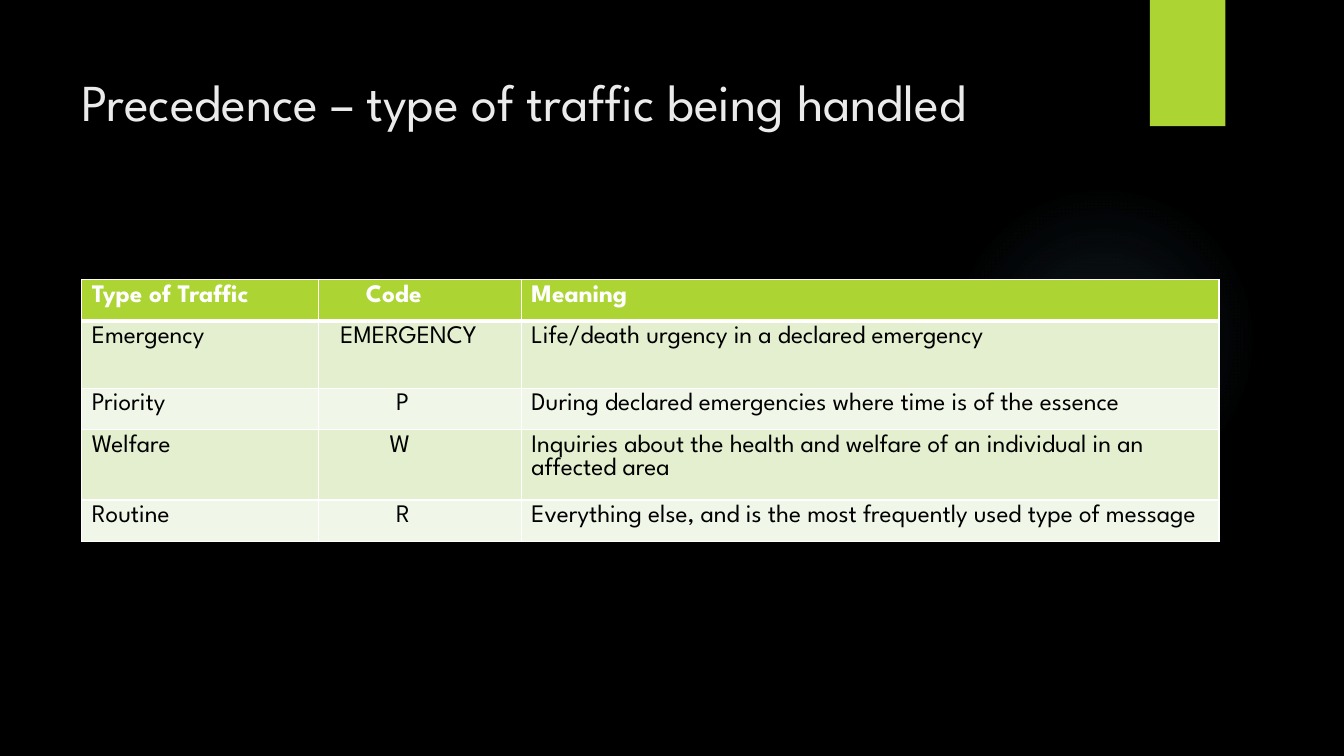
from pptx import Presentation
from pptx.dml.color import RGBColor
from pptx.enum.shapes import MSO_SHAPE as Shape
from pptx.enum.text import MSO_ANCHOR as Anchor
from pptx.oxml import parse_xml
from pptx.oxml.ns import nsdecls
from pptx.util import Cm, Pt

BLACK = RGBColor(0x00, 0x00, 0x00)
WHITE = RGBColor(0xFF, 0xFF, 0xFF)
TITLE_GREY = RGBColor(0xEB, 0xEB, 0xEB)
LIME = RGBColor(0xAC, 0xD4, 0x33)
BAND_DARK = RGBColor(0xE3, 0xEF, 0xCE)
BAND_LIGHT = RGBColor(0xF1, 0xF7, 0xE8)
GLOW_BLUE = RGBColor(0x7A, 0xC4, 0xF0)
FONT = "League Spartan"

COLUMN_WIDTHS = (5.96, 5.12, 17.58)
ROW_HEIGHTS = (1.04, 1.7, 1.04, 1.42, 1.04)
CODE_INDENTS = (1.2, 0.56, 1.96, 1.8, 1.96)
TRAFFIC_ROWS = (
    ("Type of Traffic", "Code", "Meaning"),
    ("Emergency", "EMERGENCY", "Life/death urgency in a declared emergency"),
    ("Priority", "P", "During declared emergencies where time is of the essence"),
    ("Welfare", "W", "Inquiries about the health and welfare of an individual in an affected area"),
    ("Routine", "R", "Everything else, and is the most frequently used type of message"),
)


def apply_format(target, values):
    """Set each named attribute of the target."""
    for name, value in values.items():
        setattr(target, name, value)


def write_text(text_frame, text, size, color, bold=False):
    """Write one formatted paragraph into a text frame."""
    paragraph = text_frame.paragraphs[0]
    run = paragraph.add_run()
    run.text = text
    apply_format(run.font, {"name": FONT, "size": Pt(size), "bold": bold})
    run.font.color.rgb = color


def add_plain_shape(slide, kind, left, top, width, height, color):
    """Add a filled shape without line or inherited shadow."""
    shape = slide.shapes.add_shape(kind, Cm(left), Cm(top), Cm(width), Cm(height))
    shape.shadow.inherit = False
    shape.fill.solid()
    shape.fill.fore_color.rgb = color
    shape.line.fill.background()
    return shape


def add_glow(slide):
    """Add the faint round glow behind the table."""
    shape = add_plain_shape(slide, Shape.OVAL, 23.9, 4.65, 7.82, 7.82, GLOW_BLUE)
    stops = "".join(
        f'<a:gs pos="{position * 1000}"><a:srgbClr val="{GLOW_BLUE}">'
        f'<a:alpha val="{alpha * 1000}"/></a:srgbClr></a:gs>'
        for position, alpha in ((0, 7), (36, 6), (69, 0))
    )
    gradient = parse_xml(
        f'<a:gradFill {nsdecls("a")}><a:gsLst>{stops}</a:gsLst><a:path path="circle">'
        '<a:fillToRect l="50000" t="50000" r="50000" b="50000"/></a:path></a:gradFill>'
    )
    properties = shape.element.spPr
    properties.replace(properties.find("{*}solidFill"), gradient)


def add_ribbon(slide):
    """Add the lime ribbon with its soft shadow."""
    shape = add_plain_shape(slide, Shape.RECTANGLE, 28.98, 0, 1.9, 3.18, LIME)
    shadow = parse_xml(
        f'<a:outerShdw {nsdecls("a")} blurRad="{Pt(3)}" dist="{Pt(2)}" dir="5400000" '
        f'rotWithShape="0"><a:srgbClr val="{BLACK}"><a:alpha val="45000"/>'
        '</a:srgbClr></a:outerShdw>'
    )
    shape.element.spPr.find("{*}effectLst").append(shadow)


def add_title(slide, text):
    """Add the slide title."""
    box = slide.shapes.add_textbox(Cm(1.8), Cm(1.27), Cm(26.77), Cm(2.9))
    apply_format(box.text_frame, {
        "word_wrap": True, "vertical_anchor": Anchor.TOP, "margin_top": Cm(0.5),
    })
    write_text(box.text_frame, text, 37, TITLE_GREY)


def set_borders(cell, top, bottom):
    """Draw white cell borders with the given top and bottom widths."""
    for side, width in (("L", 1), ("R", 1), ("T", top), ("B", bottom)):
        cell._tc.get_or_add_tcPr().append(parse_xml(
            f'<a:ln{side} {nsdecls("a")} w="{Pt(width)}"><a:solidFill>'
            f'<a:srgbClr val="{WHITE}"/></a:solidFill></a:ln{side}>'
        ))


def add_traffic_table(slide):
    """Add the table of traffic types."""
    table = slide.shapes.add_table(
        len(ROW_HEIGHTS), len(COLUMN_WIDTHS), Cm(2.06), Cm(7.04),
        Cm(sum(COLUMN_WIDTHS)), Cm(sum(ROW_HEIGHTS)),
    ).table
    apply_format(table, {"first_row": False, "horz_banding": False})
    for column, width in zip(table.columns, COLUMN_WIDTHS):
        column.width = Cm(width)
    for row_index, texts in enumerate(TRAFFIC_ROWS):
        table.rows[row_index].height = Cm(ROW_HEIGHTS[row_index])
        header = row_index == 0
        band = BAND_DARK if row_index % 2 else BAND_LIGHT
        for column_index, text in enumerate(texts):
            cell = table.cell(row_index, column_index)
            set_borders(cell, 3 if row_index == 1 else 1, 3 if header else 1)
            cell.fill.solid()
            cell.fill.fore_color.rgb = LIME if header else band
            if column_index == 1:
                cell.margin_left = Cm(CODE_INDENTS[row_index])
            write_text(cell.text_frame, text, 18, WHITE if header else BLACK, header)


def main():
    """Build and save the presentation."""
    presentation = Presentation()
    apply_format(presentation, {"slide_width": Cm(33.87), "slide_height": Cm(19.05)})
    slide = presentation.slides.add_slide(presentation.slide_layouts[6])
    slide.background.fill.solid()
    slide.background.fill.fore_color.rgb = BLACK
    add_glow(slide)
    add_ribbon(slide)
    add_title(slide, "Precedence – type of traffic being handled")
    add_traffic_table(slide)
    presentation.save("out.pptx")


if __name__ == "__main__":
    main()
